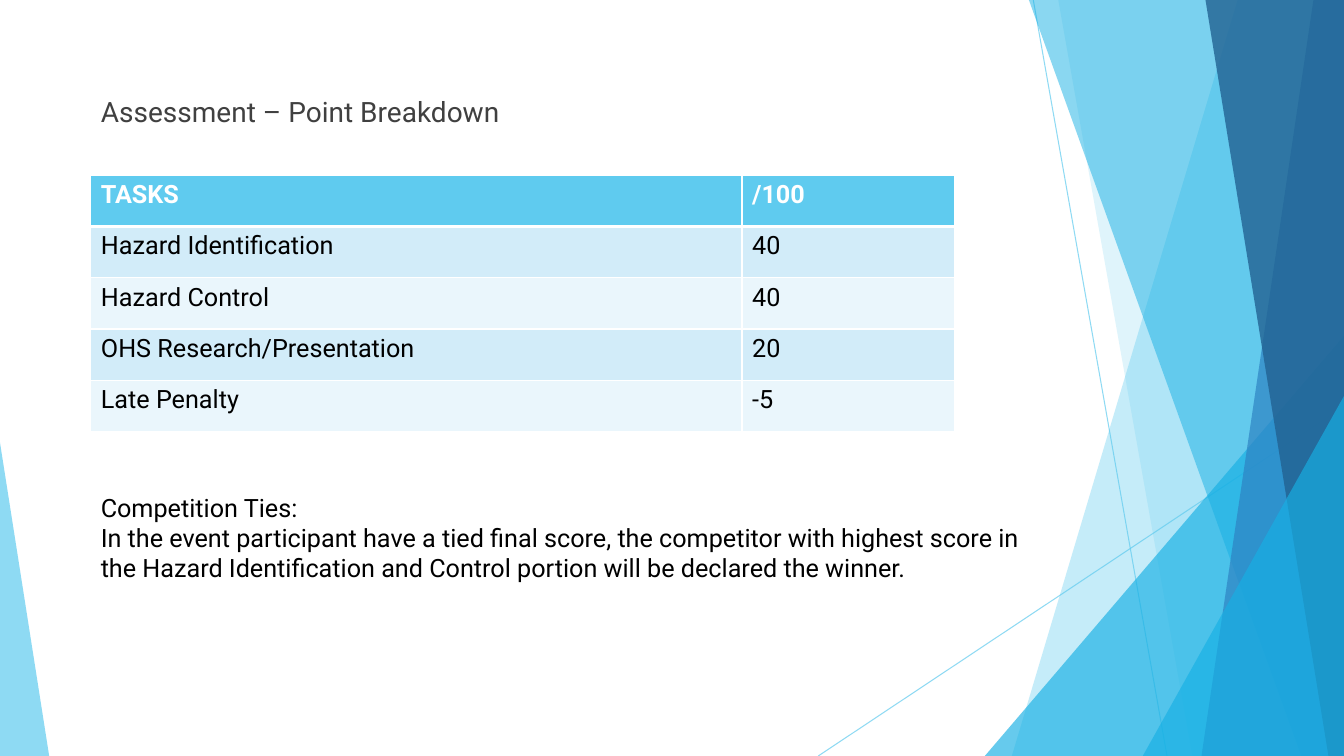
from lxml.etree import SubElement
from pptx import Presentation
from pptx.dml.color import RGBColor
from pptx.enum.shapes import MSO_CONNECTOR, MSO_SHAPE
from pptx.enum.text import MSO_ANCHOR, MSO_AUTO_SIZE, PP_ALIGN
from pptx.oxml.ns import qn
from pptx.util import Cm, Pt

WIDTH, HEIGHT = 33.87, 19.05
SKY, AZURE, BLUE, NAVY = "5FCBEF", "17B0E4", "2E83C3", "226292"
WHITE, BLACK, GREY = "FFFFFF", "000000", "404040"
BAND_DARK, BAND_LIGHT = "D2ECF9", "EAF6FC"

# Right-hand bands: top left x, bottom left x, colour, opacity in percent
BACK_BANDS = [(31.19, 25.5, SKY, 36), (26.67, 30.05, SKY, 20)]
FRONT_BANDS = [(25.93, 32.79, AZURE, 50), (33.1, 30.28, BLUE, 70),
               (30.38, 33.48, NAVY, 80)]
SCORES = [("TASKS", "/100"), ("Hazard Identification", "40"),
          ("Hazard Control", "40"), ("OHS Research/Presentation", "20"),
          ("Late Penalty", "-5")]
TIE_RULE = [
    "Competition Ties:",
    "In the event participant have a tied final score, the competitor with "
    "highest score in the Hazard Identification and Control portion will be "
    "declared the winner."]


def rgb(colour):
    return RGBColor.from_string(colour)


def set_values(target, values):
    """Set each named attribute of target."""
    for name, value in values.items():
        setattr(target, name, value)


def set_opacity(fill_parent, percent):
    """Add transparency to the solid fill below fill_parent."""
    colour = fill_parent.find(qn("a:solidFill"))[0]
    SubElement(colour, qn("a:alpha"), val=str(percent * 1000))


class SlideBuilder:
    """Holds the text style and the current slide."""

    font = {"name": "Roboto", "size": Pt(18), "bold": False}
    frame = {"word_wrap": True, "auto_size": MSO_AUTO_SIZE.NONE,
             "vertical_anchor": MSO_ANCHOR.TOP}

    def __init__(self, deck):
        self.slide = deck.slides.add_slide(deck.slide_layouts[5])
        self.shapes = self.slide.shapes

    def fill_text(self, text_frame, lines, colour=BLACK, space_before=0, **font):
        text_frame.text = "\n".join(lines)
        for paragraph in text_frame.paragraphs:
            set_values(paragraph, {"alignment": PP_ALIGN.LEFT,
                                   "line_spacing": 1.0,
                                   "space_before": Pt(space_before)})
            for run in paragraph.runs:
                set_values(run.font, {**self.font, **font})
                run.font.color.rgb = rgb(colour)

    def paint(self, shape, colour, opacity):
        shape.shadow.inherit = False
        shape.fill.solid()
        shape.fill.fore_color.rgb = rgb(colour)
        shape.line.fill.background()
        set_opacity(shape._element.spPr, opacity)

    def hairline(self, *ends):
        line = self.shapes.add_connector(MSO_CONNECTOR.STRAIGHT, *map(Cm, ends))
        line.line.width = Pt(0.75)
        line.line.color.rgb = rgb(SKY)
        properties = line._element.spPr
        set_opacity(properties.find(qn("a:ln")), 70)
        SubElement(properties, qn("a:effectLst"))

    def band(self, top_left, bottom_left, colour, opacity):
        """Draw a full-height band that reaches the right edge."""
        corners = [(WIDTH, 0), (WIDTH, HEIGHT), (bottom_left, HEIGHT)]
        outline = self.shapes.build_freeform(Cm(top_left), Cm(0))
        outline.add_line_segments([(Cm(x), Cm(y)) for x, y in corners])
        self.paint(outline.convert_to_shape(), colour, opacity)

    def triangle(self, left, top, width, apex, colour, opacity):
        """Draw a triangle that stands on the bottom edge."""
        triangle = self.shapes.add_shape(
            MSO_SHAPE.ISOSCELES_TRIANGLE,
            *map(Cm, (left, top, width, HEIGHT - top)))
        triangle.adjustments[0] = apex
        self.paint(triangle, colour, opacity)

    def title(self, text, left, top, width, height):
        title = self.shapes.title
        set_values(title, {"left": Cm(left), "top": Cm(top),
                           "width": Cm(width), "height": Cm(height)})
        set_values(title.text_frame, self.frame)
        self.fill_text(title.text_frame, [text], GREY, 10, size=Pt(20))

    def text(self, lines, *box):
        frame = self.shapes.add_textbox(*map(Cm, box)).text_frame
        set_values(frame, self.frame)
        self.fill_text(frame, lines)

    def cell_borders(self, cell, top, bottom):
        properties = cell._tc.get_or_add_tcPr()
        for side, width in {"L": 1, "R": 1, "T": top, "B": bottom}.items():
            border = SubElement(properties, qn(f"a:ln{side}"), w=str(Pt(width)))
            fill = SubElement(border, qn("a:solidFill"))
            SubElement(fill, qn("a:srgbClr"), val=WHITE)

    def table(self, rows, left, top, column_widths, row_height):
        table = self.shapes.add_table(
            len(rows), len(column_widths), Cm(left), Cm(top),
            Cm(sum(column_widths)), Cm(row_height * len(rows))).table
        for column, width in zip(table.columns, column_widths):
            column.width = Cm(width)
        for r, row in enumerate(rows):
            header = r == 0
            band = SKY if header else BAND_DARK if r % 2 else BAND_LIGHT
            table.rows[r].height = Cm(row_height)
            for c, value in enumerate(row):
                cell = table.cell(r, c)
                self.cell_borders(cell, 3 if r == 1 else 1, 3 if header else 1)
                cell.fill.solid()
                cell.fill.fore_color.rgb = rgb(band)
                self.fill_text(cell.text_frame, [value],
                               WHITE if header else BLACK, bold=header)


def main():
    deck = Presentation()
    set_values(deck, {"slide_width": Cm(WIDTH), "slide_height": Cm(HEIGHT)})
    page = SlideBuilder(deck)

    page.hairline(26.04, 0, 29.41, HEIGHT)
    page.hairline(WIDTH, 10.24, 20.62, HEIGHT)
    for band in BACK_BANDS:
        page.band(*band)
    page.triangle(24.82, 8.46, 9.05, 1, AZURE, 66)
    for band in FRONT_BANDS:
        page.band(*band)
    page.triangle(28.8, 9.98, 5.07, 1, AZURE, 66)
    page.triangle(0, 11.15, 1.24, 0, SKY, 70)

    page.title("Assessment – Point Breakdown", 2.29, 2.26, 21.77, 1.5)
    page.table(SCORES, 2.29, 4.42, (16.41, 5.36), 1.29)
    page.text(TIE_RULE, 2.29, 12.27, 24.33, 2.57)
    deck.save("out.pptx")


if __name__ == "__main__":
    main()
